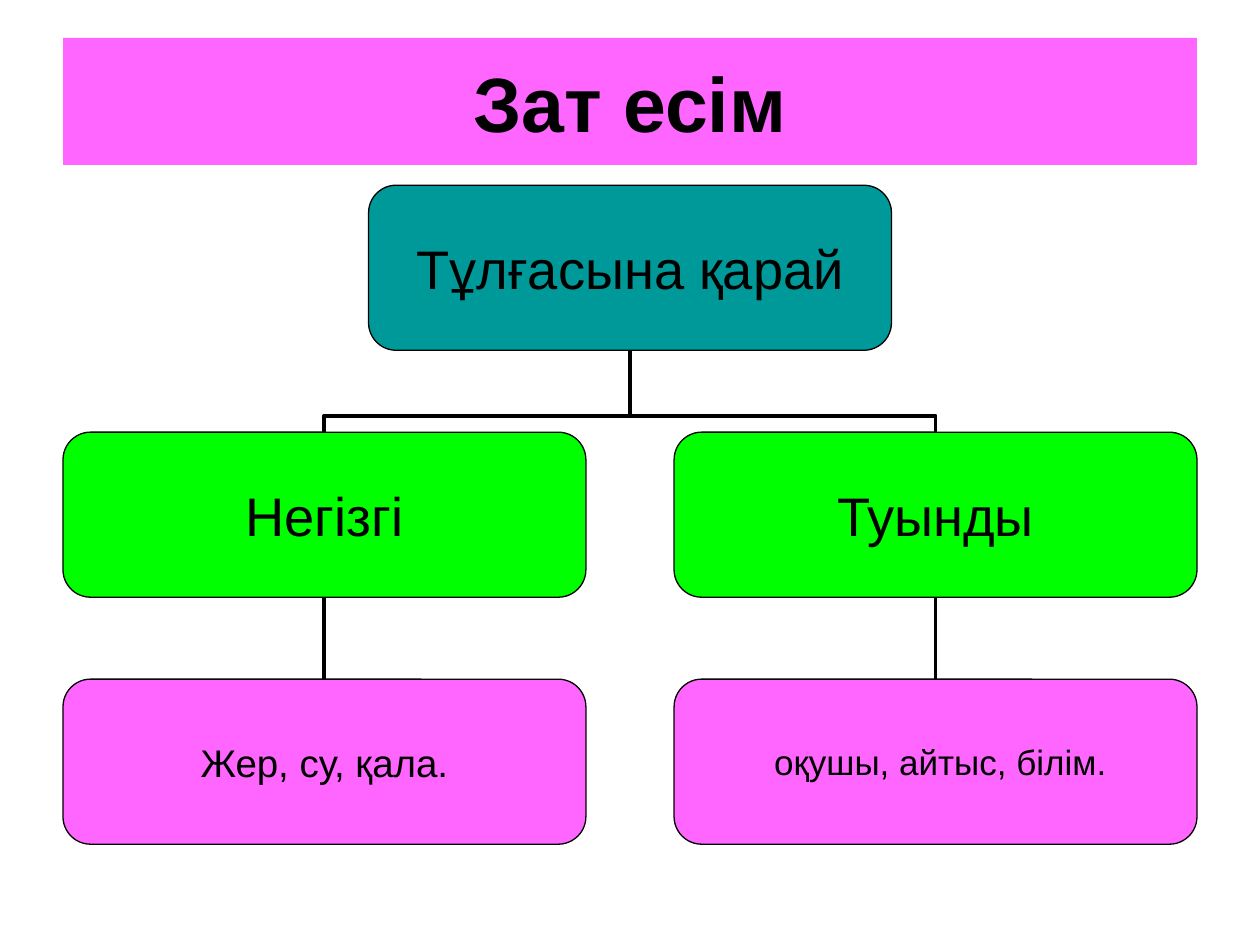
from lxml.etree import SubElement
from pptx import Presentation
from pptx.dml.color import RGBColor
from pptx.enum.shapes import MSO_CONNECTOR as Link, MSO_SHAPE as Preset
from pptx.enum.text import MSO_ANCHOR as Anchor, PP_ALIGN as Align
from pptx.oxml.ns import qn
from pptx.util import Inches, Pt

BLACK, PINK, TEAL, GREEN = "000000", "FF66FF", "009999", "00FF00"


def color(hex_code):
    return RGBColor.from_string(hex_code)


class WordTree:
    font = "Arial"
    margin, column_step = 0.5, 2.425
    first_row, row_step = 1.47, 1.96
    box_width, box_height = 4.15, 1.31
    bend = 0.202

    def __init__(self, slide):
        self.slide = slide
        self.tree = slide.shapes.add_group_shape().shapes

    def place(self, column, row):
        return (self.margin + column * self.column_step,
                self.first_row + row * self.row_step)

    def label(self, frame, text, size, bold=False):
        frame.vertical_anchor = Anchor.MIDDLE
        paragraph = frame.paragraphs[0]
        paragraph.alignment = Align.CENTER
        run = paragraph.add_run()
        run.text = text
        run.font.name, run.font.size, run.font.bold = self.font, Pt(size), bold
        run.font.color.rgb = color(BLACK)

    def title(self, text):
        heading = self.slide.shapes.title
        heading.left, heading.top = Inches(self.margin), Inches(0.3)
        heading.width, heading.height = Inches(9), Inches(1.01)
        heading.fill.solid()
        heading.fill.fore_color.rgb = color(PINK)
        self.label(heading.text_frame, text, 44, bold=True)

    def box(self, column, row, text, fill, size):
        left, top = self.place(column, row)
        node = self.tree.add_shape(
            Preset.ROUNDED_RECTANGLE, Inches(left), Inches(top),
            Inches(self.box_width), Inches(self.box_height))
        node.shadow.inherit = False
        node.adjustments[0] = 0.167
        node.fill.solid()
        node.fill.fore_color.rgb = color(fill)
        node.line.color.rgb = color(BLACK)
        node.line.width = Pt(0.75)
        frame = node.text_frame
        frame.margin_left = frame.margin_right = 0
        frame.margin_top = frame.margin_bottom = 0
        frame.word_wrap = False
        self.label(frame, text, size)

    def link(self, kind, start, end):
        line = self.tree.add_connector(kind, *map(Inches, start + end))
        line.line.color.rgb = color(BLACK)
        line.line.width = Pt(2.25)
        SubElement(line._element.spPr, qn("a:effectLst"))
        return line._element.spPr

    def straight(self, column, row):
        left, top = self.place(column, row)
        center = left + self.box_width / 2
        self.link(Link.STRAIGHT, (center, top),
                  (center, top - self.row_step + self.box_height))

    def elbow(self, column, row, parent_column):
        left, top = self.place(column, row)
        span = (parent_column - column) * self.column_step
        gap = self.row_step - self.box_height
        middle_x = left + (self.box_width + span) / 2
        middle_y = top - gap / 2
        side = gap / 2 if span > 0 else -gap / 2
        half_span = abs(span) / 2
        properties = self.link(
            Link.ELBOW, (middle_x - side, middle_y - half_span),
            (middle_x + side, middle_y + half_span))
        turn = 270 if span > 0 else 90
        properties.find(qn("a:xfrm")).set("rot", str(turn * 60000))
        guides = properties.find(qn("a:prstGeom")).find(qn("a:avLst"))
        SubElement(guides, qn("a:gd"), name="adj1",
                   fmla=f"val {round(self.bend * 100000)}")


def main():
    deck = Presentation()
    deck.slide_width, deck.slide_height = Inches(10), Inches(7.5)
    noun = WordTree(deck.slides.add_slide(deck.slide_layouts[5]))
    noun.title("Зат есім")

    branches = [
        (0, "Негізгі", "Жер, су, қала.", 22),
        (2, "Туынды", " оқушы, айтыс, білім.", 20),
    ]
    for column, *_ in branches:
        noun.straight(column, 2)
        noun.elbow(column, 1, parent_column=1)
    noun.box(1, 0, "Тұлғасына қарай", TEAL, 31)
    for column, kind, examples, size in branches:
        noun.box(column, 1, kind, GREEN, 31)
        noun.box(column, 2, examples, PINK, size)

    deck.save("out.pptx")


if __name__ == "__main__":
    main()
